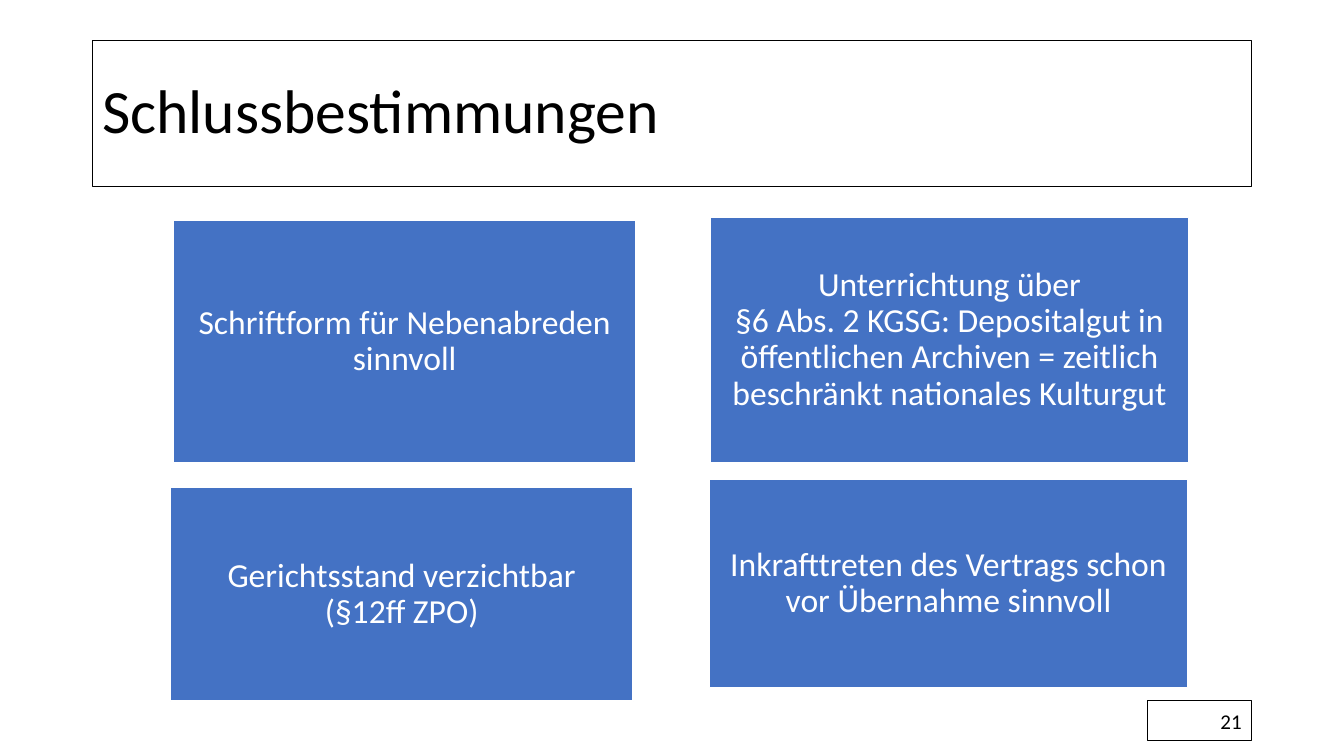
from pptx import Presentation
from pptx.dml.color import RGBColor
from pptx.enum.shapes import MSO_SHAPE
from pptx.enum.text import MSO_ANCHOR, PP_ALIGN
from pptx.oxml.ns import qn
from pptx.util import Pt
from lxml.etree import SubElement

BLACK, WHITE, BLUE = "000000", "FFFFFF", "4472C4"


def color(hex_value):
    return RGBColor.from_string(hex_value)


class SlideBuilder:
    font = "Calibri"

    def __init__(self, slide):
        self.slide = slide

    def box(self, at, fill, line, line_width, opacity=100):
        """Draw an outlined rectangle; at is left, top, width, height."""
        sp = self.slide.shapes.add_shape(MSO_SHAPE.RECTANGLE, *map(Pt, at))
        sp.shadow.inherit = False
        sp.fill.solid()
        sp.fill.fore_color.rgb = color(fill)
        sp.line.color.rgb = color(line)
        sp.line.width = Pt(line_width)
        if opacity < 100:
            rgb = sp.element.spPr.find(qn("a:solidFill"))[0]
            SubElement(rgb, qn("a:alpha"), val=str(opacity * 1000))
        return sp

    def label(self, sp, text, size, ink, align, spacing=1.0, inset=(7.2, 3.6)):
        """Fill a shape with one paragraph; \\v is a line break."""
        side, end = map(Pt, inset)
        tf = sp.text_frame
        frame = {"word_wrap": True, "vertical_anchor": MSO_ANCHOR.MIDDLE,
                 "margin_left": side, "margin_right": side,
                 "margin_top": end, "margin_bottom": end}
        for name, value in frame.items():
            setattr(tf, name, value)
        p = tf.paragraphs[0]
        p.text, p.alignment, p.line_spacing = text, align, spacing
        for r in p.runs:
            for name, value in {"name": self.font, "size": Pt(size)}.items():
                setattr(r.font, name, value)
            r.font.color.rgb = color(ink)

    def title(self, text, at):
        sp = self.box(at, WHITE, BLACK, 1, opacity=75)
        self.label(sp, text, 44, BLACK, PP_ALIGN.LEFT, spacing=0.9)

    def page_number(self, text, at):
        sp = self.box(at, WHITE, BLACK, 0.75, opacity=75)
        self.label(sp, text, 15, BLACK, PP_ALIGN.RIGHT)

    def card(self, text, at):
        sp = self.box(at, BLUE, WHITE, 1)
        self.label(sp, text, 24, WHITE, PP_ALIGN.CENTER, spacing=0.9,
                   inset=(7.2, 7.2))


def main():
    prs = Presentation()
    prs.slide_width, prs.slide_height = Pt(960), Pt(540)
    s = SlideBuilder(prs.slides.add_slide(prs.slide_layouts[6]))

    # Title and page number
    s.title("Schlussbestimmungen", (66, 28.75, 828, 104.4))
    s.page_number("21", (819.8, 500.4, 74.2, 28.8))

    # Cards with the closing provisions
    left_width, right_width = 330.5, 341.3
    cards = [
        ("Schriftform für Nebenabreden sinnvoll",
         (123.8, 157.3, left_width, 173.5)),
        ("Unterrichtung über\v§6 Abs. 2 KGSG: Depositalgut in öffentlichen "
         "Archiven = zeitlich beschränkt nationales Kulturgut",
         (507.6, 155.2, right_width, 175)),
        ("Gerichtsstand verzichtbar\v(§12ff ZPO)",
         (121.7, 348.2, left_width, 152.6)),
        ("Inkrafttreten des Vertrags schon vor Übernahme sinnvoll",
         (506.9, 342.7, right_width, 148.3)),
    ]
    for text, at in cards:
        s.card(text, at)

    prs.save("out.pptx")


if __name__ == "__main__":
    main()
